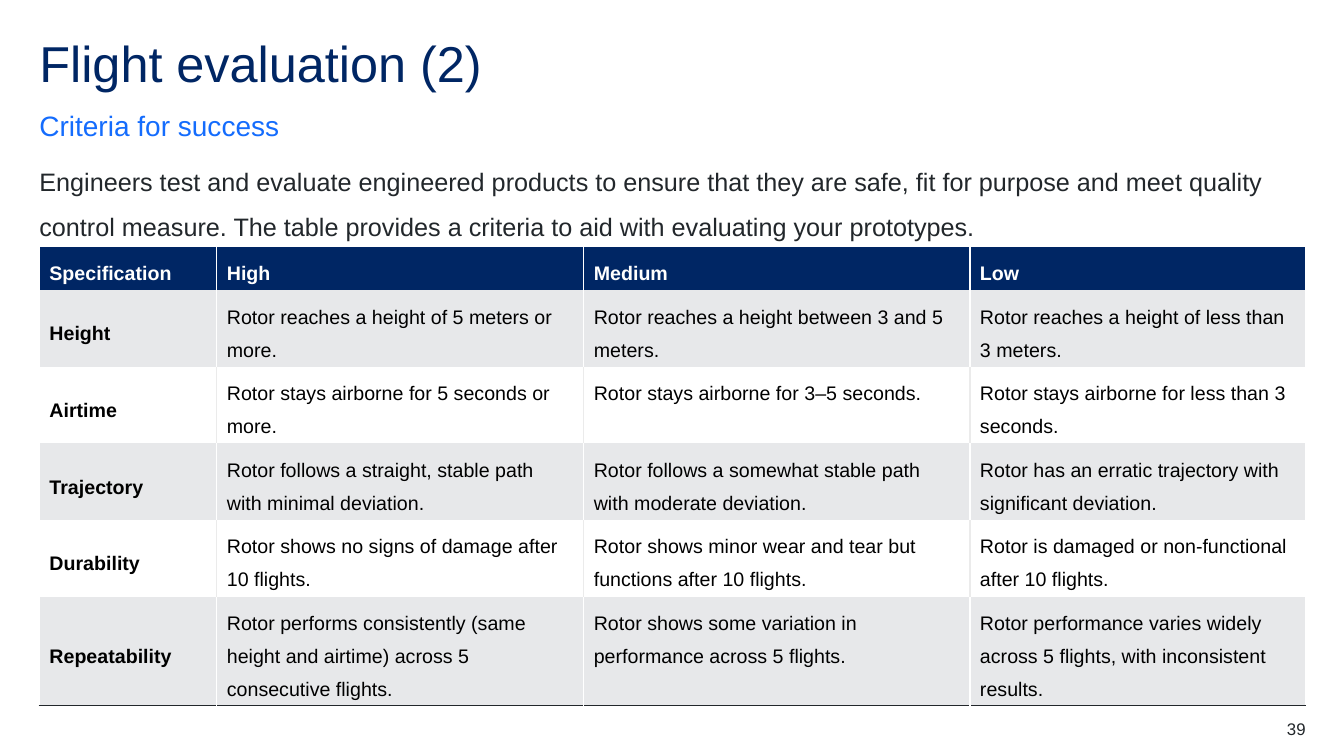
from dataclasses import dataclass
from pptx import Presentation, util as u
from pptx.dml.color import RGBColor
from pptx.enum import text
from pptx.oxml import parse_xml
from pptx.oxml.ns import nsdecls


@dataclass(frozen=True)
class Theme:
    font: str = "Arial"
    navy: str = "002664"
    blue: str = "146CFD"
    ink: str = "22272B"
    black: str = "000000"
    white: str = "FFFFFF"
    band: str = "E7E8EA"
    rule: str = "EBEBEB"
    title: int = 36
    subtitle: int = 20
    body: int = 18
    cell: int = 14
    number: int = 12


THEME = Theme()
WIDTH, HEIGHT = 13.33, 7.5
MARGIN, CONTENT_WIDTH = 0.39, 12.56
COLUMNS = [1.76, 3.64, 3.83, 3.33]
ROWS = [0.43] + [0.76] * 4 + [1.07]
CRITERIA = [
    ["Specification", "High", "Medium", "Low"],
    ["Height", "Rotor reaches a height of 5 meters or more.",
     "Rotor reaches a height between 3 and 5 meters.",
     "Rotor reaches a height of less than 3 meters."],
    ["Airtime", "Rotor stays airborne for 5 seconds or more.",
     "Rotor stays airborne for 3–5 seconds.",
     "Rotor stays airborne for less than 3 seconds."],
    ["Trajectory", "Rotor follows a straight, stable path with minimal deviation.",
     "Rotor follows a somewhat stable path with moderate deviation.",
     "Rotor has an erratic trajectory with significant deviation."],
    ["Durability", "Rotor shows no signs of damage after 10 flights.",
     "Rotor shows minor wear and tear but functions after 10 flights.",
     "Rotor is damaged or non-functional after 10 flights."],
    ["Repeatability",
     "Rotor performs consistently (same height and airtime) across 5 consecutive flights.",
     "Rotor shows some variation in performance across 5 flights.",
     "Rotor performance varies widely across 5 flights, with inconsistent results."],
]


def style_paragraph(para, size, color, bold=False, line=1.0, before=0, after=0):
    para.font.name = THEME.font
    para.font.size = u.Pt(size)
    para.font.bold = bold
    para.font.color.rgb = RGBColor.from_string(color)
    para.line_spacing = line
    para.space_before, para.space_after = u.Pt(before), u.Pt(after)


def place_text(shape, box, words, size, color, anchor=text.MSO_ANCHOR.TOP,
               align=text.PP_ALIGN.LEFT, line=1.0, after=0):
    shape.left, shape.top, shape.width, shape.height = map(u.Inches, box)
    frame = shape.text_frame
    frame.text = words
    frame.word_wrap = True
    frame.auto_size = text.MSO_AUTO_SIZE.NONE
    frame.vertical_anchor = anchor
    frame.margin_left = frame.margin_right = frame.margin_top = frame.margin_bottom = 0
    para = frame.paragraphs[0]
    para.alignment = align
    style_paragraph(para, size, color, line=line, after=after)


def set_border(cell, side, color):
    paint = f'<a:solidFill><a:srgbClr val="{color}"/></a:solidFill>' if color else "<a:noFill/>"
    cell._tc.get_or_add_tcPr().append(
        parse_xml(f'<a:ln{side} {nsdecls("a")} w="12700">{paint}</a:ln{side}>'))


# Title, subtitle and introduction
def add_heading(page, box):
    left, top, width, height = box
    holders = {holder.placeholder_format.idx: holder for holder in page.placeholders}
    place_text(holders[0], (left, top, width, 0.6), "Flight evaluation (2)",
               THEME.title, THEME.navy, line=0.9)
    place_text(holders[1], (left, top + 0.68, width, 0.34), "Criteria for success",
               THEME.subtitle, THEME.blue, text.MSO_ANCHOR.BOTTOM, line=1.5, after=12)
    place_text(holders[3], (left, top + 1.11, width, height - 1.11),
               "Engineers test and evaluate engineered products to ensure that they are safe, "
               "fit for purpose and meet quality control measure. The table provides a criteria "
               "to aid with evaluating your prototypes.",
               THEME.body, THEME.ink, line=1.5, after=12)
    for unused in (2, 4):
        element = holders[unused].element
        element.getparent().remove(element)


# One table cell: labels are bold and centred in height, descriptions start at the top
def fill_cell(cell, words, row, column):
    header, label = row == 0, row == 0 or column == 0
    striped = row % 2 == 1
    side_color = THEME.white if header or striped else THEME.rule
    last_row, last_column = row == len(ROWS) - 1, column == len(COLUMNS) - 1
    set_border(cell, "L", side_color if column else THEME.white)
    set_border(cell, "R", THEME.white if last_column else side_color)
    set_border(cell, "T", None)
    set_border(cell, "B", THEME.ink if last_row else None)
    cell.fill.solid()
    fill = THEME.navy if header else THEME.band if striped else THEME.white
    cell.fill.fore_color.rgb = RGBColor.from_string(fill)
    cell.text = words
    cell.vertical_anchor = text.MSO_ANCHOR.MIDDLE if label else text.MSO_ANCHOR.TOP
    style_paragraph(cell.text_frame.paragraphs[0], THEME.cell,
                    THEME.white if header else THEME.black, bold=label, line=1.5,
                    before=12 if label else 0, after=6 if label else 12)


# Criteria table
def add_criteria(page, box):
    table = page.shapes.add_table(len(ROWS), len(COLUMNS), *map(u.Inches, box)).table
    table.horz_banding = False
    for column, width in zip(table.columns, COLUMNS):
        column.width = u.Inches(width)
    for row, height in zip(table.rows, ROWS):
        row.height = u.Inches(height)
    for row, entries in enumerate(CRITERIA):
        for column, words in enumerate(entries):
            fill_cell(table.cell(row, column), words, row, column)


# Page number
def add_page_number(page, box):
    place_text(page.shapes.add_textbox(0, 0, 0, 0), box, "39", THEME.number, THEME.ink,
               align=text.PP_ALIGN.RIGHT)


def main():
    deck = Presentation()
    deck.slide_width, deck.slide_height = u.Inches(WIDTH), u.Inches(HEIGHT)
    page = deck.slides.add_slide(deck.slide_layouts.get_by_name("Comparison"))
    add_heading(page, (MARGIN, MARGIN, CONTENT_WIDTH, 1.93))
    add_criteria(page, (MARGIN, 2.45, CONTENT_WIDTH, sum(ROWS)))
    add_page_number(page, (MARGIN + CONTENT_WIDTH - 0.79, 7.13, 0.79, 0.2))
    deck.save("out.pptx")


if __name__ == "__main__":
    main()
